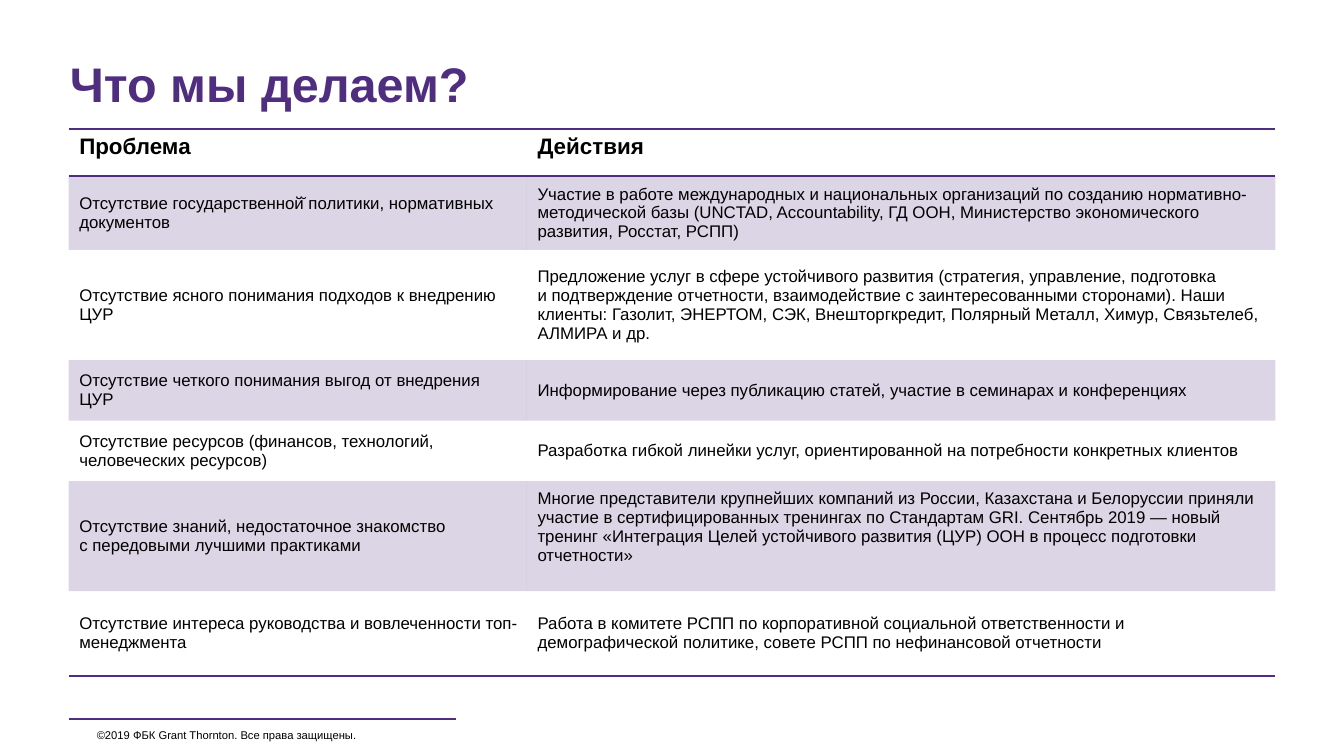
from lxml.etree import SubElement
from pptx import Presentation
from pptx.dml.color import RGBColor
from pptx.enum.shapes import MSO_CONNECTOR
from pptx.enum.text import MSO_ANCHOR, MSO_AUTO_SIZE, PP_ALIGN
from pptx.oxml.ns import qn
from pptx.util import Inches, Pt

PURPLE, BLACK = "4F2D7F", "000000"
NO_STYLE = "{2D5ABB26-0587-4C30-8999-92F81FD0307C}"
COLUMNS = (3.41, 5.57)
ROWS = (
    (0.35, "Проблема", "Действия"),
    (0.55, "Отсутствие государственной̆ политики, нормативных документов",
     "Участие в работе международных и национальных организаций по созданию "
     "нормативно-методической базы (UNCTAD, Accountability, ГД ООН, Министерство "
     "экономического развития, Росстат, РСПП)"),
    (0.82, "Отсутствие ясного понимания подходов к внедрению ЦУР",
     "Предложение услуг в сфере устойчивого развития (стратегия, управление, подготовка\v"
     "и подтверждение отчетности, взаимодействие с заинтересованными сторонами). Наши "
     "клиенты: Газолит, ЭНЕРТОМ, СЭК, Внешторгкредит, Полярный Металл, Химур, "
     "Связьтелеб, АЛМИРА и др."),
    (0.45, "Отсутствие четкого понимания выгод от внедрения ЦУР",
     "Информирование через публикацию статей, участие в семинарах и конференциях"),
    (0.45, "Отсутствие ресурсов (финансов, технологий, человеческих ресурсов)",
     "Разработка гибкой линейки услуг, ориентированной на потребности конкретных клиентов"),
    (0.82, "Отсутствие знаний, недостаточное знакомство\vс передовыми лучшими практиками",
     "Многие представители крупнейших компаний из России, Казахстана и Белоруссии приняли "
     "участие в сертифицированных тренингах по Стандартам GRI. Сентябрь 2019 — новый "
     "тренинг «Интеграция Целей устойчивого развития (ЦУР) ООН в процесс подготовки "
     "отчетности»"),
    (0.63, "Отсутствие интереса руководства и вовлеченности топ-менеджмента",
     "Работа в комитете РСПП по корпоративной социальной ответственности и "
     "демографической политике, совете РСПП по нефинансовой отчетности"),
)


def color(value):
    """Turn a hex string into a colour."""
    return RGBColor.from_string(value)


def set_attributes(target, values):
    """Set each named format value on the target."""
    for name, value in values.items():
        setattr(target, name, value)


def write(paragraph, text, size, hex_color=BLACK, bold=False):
    """Fill a left-aligned paragraph with Arial text."""
    paragraph.text = text
    paragraph.alignment = PP_ALIGN.LEFT
    set_attributes(paragraph.font, {"name": "Arial", "size": Pt(size), "bold": bold})
    paragraph.font.color.rgb = color(hex_color)


def margins(left, right, vertical):
    """Give the four margins as format values."""
    return {"margin_left": Inches(left), "margin_right": Inches(right),
            "margin_top": Inches(vertical), "margin_bottom": Inches(vertical)}


def add_border(cell, side):
    """Draw a purple one-point border on one side of a cell."""
    line = SubElement(cell._tc.get_or_add_tcPr(), qn(f"a:{side}"), w=str(Pt(1)))
    SubElement(SubElement(line, qn("a:solidFill")), qn("a:srgbClr"), val=PURPLE)


def shade(cell):
    """Fill a cell with purple at 20 % opacity."""
    cell.fill.solid()
    cell.fill.fore_color.rgb = color(PURPLE)
    tint = cell._tc.tcPr.find(f"{qn('a:solidFill')}/{qn('a:srgbClr')}")
    SubElement(tint, qn("a:alpha"), val="20000")


def place_title(slide, left, top, width, height):
    """Place the slide title in its box."""
    title = slide.shapes.title
    set_attributes(title, {"left": Inches(left), "top": Inches(top),
                           "width": Inches(width), "height": Inches(height)})
    set_attributes(title.text_frame, {
        **margins(0, 0, 0), "word_wrap": True, "auto_size": MSO_AUTO_SIZE.NONE,
        "vertical_anchor": MSO_ANCHOR.TOP})
    write(title.text_frame.paragraphs[0], "Что мы делаем?", 26, PURPLE, True)


def place_actions_table(slide, left, top):
    """Place the table of problems and actions, shading every other row."""
    height = sum(row[0] for row in ROWS)
    table = slide.shapes.add_table(
        len(ROWS), len(COLUMNS), Inches(left), Inches(top),
        Inches(sum(COLUMNS)), Inches(height)).table
    set_attributes(table, {"first_row": False, "horz_banding": False})
    table._tbl.tblPr.find(qn("a:tableStyleId")).text = NO_STYLE
    for column, width in zip(table.columns, COLUMNS):
        column.width = Inches(width)
    for index, (row_height, *texts) in enumerate(ROWS):
        table.rows[index].height = Inches(row_height)
        header, last = index == 0, index == len(ROWS) - 1
        for cell, text in zip(table.rows[index].cells, texts):
            anchor = MSO_ANCHOR.TOP if header else MSO_ANCHOR.MIDDLE
            set_attributes(cell, {**margins(0.08, 0.07, 0.04), "vertical_anchor": anchor})
            write(cell.text_frame.paragraphs[0], text, 12 if header else 9, bold=header)
            if header:
                add_border(cell, "lnT")
            if header or last:
                add_border(cell, "lnB")
            if index % 2:
                shade(cell)
            else:
                cell.fill.background()
    table.cell(5, 1).margin_bottom = Inches(0.17)


def place_footer(slide, left, top, width):
    """Place the footer rule with the copyright line below it."""
    rule = slide.shapes.add_connector(
        MSO_CONNECTOR.STRAIGHT, Inches(left), Inches(top), Inches(left + width), Inches(top))
    rule.line.color.rgb = color(PURPLE)
    rule.line.width = Pt(1.5)
    SubElement(rule._element.spPr, qn("a:effectLst"))
    copyright_line = slide.shapes.add_textbox(
        Inches(left + 0.21), Inches(top + 0.02), Inches(width), Inches(0.2)).text_frame
    set_attributes(copyright_line, {
        **margins(0, 0, 0.05), "word_wrap": True, "vertical_anchor": MSO_ANCHOR.MIDDLE})
    write(copyright_line.paragraphs[0], "©2019 ФБК Grant Thornton. Все права защищены.", 6)


def main():
    """Build and save the slide in 16:9 format."""
    presentation = Presentation()
    set_attributes(presentation, {"slide_width": Inches(10),
                                  "slide_height": Inches(10) * 9 // 16})
    slide = presentation.slides.add_slide(presentation.slide_layouts[5])
    place_footer(slide, 0.51, 5.35, 2.88)
    place_title(slide, 0.52, 0.4, 8.97, 0.92)
    place_actions_table(slide, 0.51, 0.96)
    presentation.save("out.pptx")


if __name__ == "__main__":
    main()
